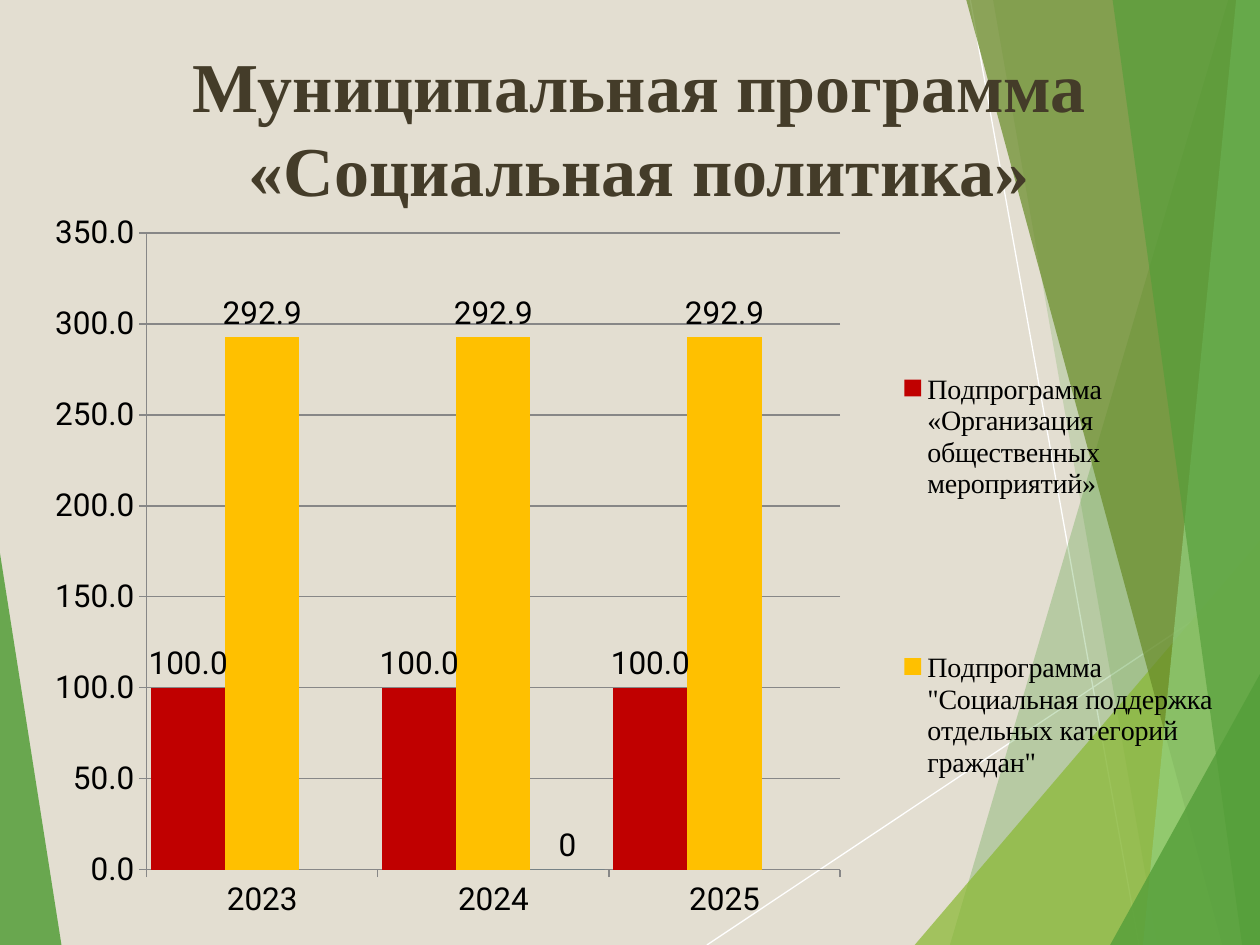
from dataclasses import dataclass

from lxml.etree import SubElement
from pptx import Presentation
from pptx.chart.data import CategoryChartData
from pptx.dml.color import RGBColor
from pptx.enum.chart import (XL_CHART_TYPE as ChartType, XL_LABEL_POSITION as LabelPos,
                             XL_LEGEND_POSITION as LegendPos, XL_TICK_MARK as Tick)
from pptx.enum.text import MSO_ANCHOR as Anchor, PP_ALIGN as Align
from pptx.oxml import parse_xml
from pptx.oxml.ns import nsdecls, qn
from pptx.util import Cm, Pt

WIDTH, HEIGHT = 25.4, 19.05


@dataclass(frozen=True)
class Theme:
    background: str = "E3DED1"
    title: str = "443C29"
    text: str = "000000"
    grid: str = "878787"
    ray: str = "FFFFFF"
    green: str = "549E39"
    lime: str = "8AB833"
    olive: str = "678A26"
    mint: str = "93D07D"
    events: str = "C00000"
    support: str = "FFC000"
    reserve: str = "076785"
    serif: str = "Times New Roman"
    sans: str = "Roboto"
    title_size: int = 40
    title_pitch: int = 48
    chart_size: int = 18
    legend_size: int = 16


def apply(target, **values):
    for name, value in values.items():
        setattr(target, name, value)


def rgb(code):
    return RGBColor.from_string(code)


def manual_layout(x, y, w, h, inner=False):
    target = '<c:layoutTarget val="inner"/>' if inner else ""
    return parse_xml(
        f'<c:layout {nsdecls("c")}><c:manualLayout>{target}'
        '<c:xMode val="edge"/><c:yMode val="edge"/>'
        f'<c:x val="{x}"/><c:y val="{y}"/><c:w val="{w}"/><c:h val="{h}"/>'
        '</c:manualLayout></c:layout>')


class SlideBuilder:
    def __init__(self, slide, theme):
        self.slide, self.theme = slide, theme
        fill = slide.background.fill
        fill.solid()
        fill.fore_color.rgb = rgb(theme.background)

    def ray(self, x1, y1, x2, y2):
        ray = self.slide.shapes.add_connector(1, Cm(x1), Cm(y1), Cm(x2), Cm(y2))
        ray.line.color.rgb = rgb(self.theme.ray)
        ray.line.width = Pt(0.75)
        SubElement(ray._element.spPr, qn("a:effectLst"))

    def facet(self, color, opacity, *corners):
        """Translucent polygon; opacity is in percent."""
        start, *rest = [(Cm(x), Cm(y)) for x, y in corners]
        outline = self.slide.shapes.build_freeform(*start)
        outline.add_line_segments(rest, close=True)
        facet = outline.convert_to_shape()
        facet.shadow.inherit = False
        facet.line.fill.background()
        facet.fill.solid()
        facet.fill.fore_color.rgb = rgb(color)
        tint = facet._element.spPr.find(qn("a:solidFill"))[0]
        SubElement(tint, qn("a:alpha"), val=str(opacity * 1000))

    def title(self, text, x, y, w, h):
        frame = self.slide.shapes.add_textbox(Cm(x), Cm(y), Cm(w), Cm(h)).text_frame
        apply(frame, text=text, word_wrap=True, vertical_anchor=Anchor.TOP)
        for line in frame.paragraphs:
            apply(line, alignment=Align.CENTER, line_spacing=Pt(self.theme.title_pitch))
            apply(line.font, name=self.theme.serif, size=Pt(self.theme.title_size), bold=True)
            line.font.color.rgb = rgb(self.theme.title)

    def columns(self, years, programmes, x, y, w, h):
        data = CategoryChartData()
        data.categories = years
        for name, values, _, number_format in programmes:
            data.add_series(name, values, number_format)
        chart = self.slide.shapes.add_chart(
            ChartType.COLUMN_CLUSTERED, Cm(x), Cm(y), Cm(w), Cm(h), data).chart
        apply(chart, has_title=False, has_legend=True)
        apply(chart.font, name=self.theme.sans, size=Pt(self.theme.chart_size))
        chart.font.color.rgb = rgb(self.theme.text)

        plot = chart.plots[0]
        apply(plot, gap_width=12, overlap=0, vary_by_categories=False)
        for series, (_, _, color, number_format) in zip(plot.series, programmes):
            series.invert_if_negative = False
            series.format.fill.solid()
            series.format.fill.fore_color.rgb = rgb(color)
            apply(series.data_labels, show_value=True, position=LabelPos.OUTSIDE_END,
                  number_format=number_format, number_format_is_linked=False)
        self.axes(chart)
        self.legend(chart, hidden=2)

        area = chart._chartSpace.chart.plotArea
        for old in area.findall(qn("c:layout")):
            area.remove(old)
        area.insert(0, manual_layout(0.108, 0.026, 0.568, 0.879, inner=True))

    def axes(self, chart):
        values = chart.value_axis
        apply(values, minimum_scale=0, maximum_scale=350, major_unit=50,
              has_major_gridlines=True)
        apply(values.tick_labels, number_format="0.0", number_format_is_linked=False)
        for axis in (values, chart.category_axis):
            apply(axis, major_tick_mark=Tick.OUTSIDE, minor_tick_mark=Tick.NONE)
        for part in (values, chart.category_axis, values.major_gridlines):
            part.format.line.color.rgb = rgb(self.theme.grid)
            part.format.line.width = Pt(0.75)

    def legend(self, chart, hidden):
        legend = chart.legend
        apply(legend, position=LegendPos.RIGHT, include_in_layout=False)
        apply(legend.font, name=self.theme.serif, size=Pt(self.theme.legend_size))
        legend.font.color.rgb = rgb(self.theme.text)
        entry = parse_xml(f'<c:legendEntry {nsdecls("c")}><c:idx val="{hidden}"/>'
                          '<c:delete val="1"/></c:legendEntry>')
        place = legend._element.find(qn("c:legendPos"))
        for old in legend._element.findall(qn("c:layout")):
            legend._element.remove(old)
        place.addnext(entry)
        entry.addnext(manual_layout(0.72, 0.01, 0.27, 0.98))


def main():
    theme = Theme()
    deck = Presentation()
    apply(deck, slide_width=Cm(WIDTH), slide_height=Cm(HEIGHT))
    page = SlideBuilder(deck.slides.add_slide(deck.slide_layouts[6]), theme)

    def band(color, opacity, top, bottom):
        """Facet from a slanted left side to the right edge of the slide."""
        page.facet(color, opacity, (top, 0), (bottom, HEIGHT), (WIDTH, HEIGHT), (WIDTH, 0))

    def corner(color, opacity, bottom, right):
        """Triangle in the lower right corner of the slide."""
        page.facet(color, opacity, (bottom, HEIGHT), (WIDTH, right), (WIDTH, HEIGHT))

    page.ray(14.25, HEIGHT, WIDTH, 11.61)
    page.ray(19.56, 0, 22.96, HEIGHT)
    page.facet(theme.green, 85, (0, 11.15), (1.24, HEIGHT), (0, HEIGHT))
    band(theme.green, 30, 24.76, 19.15)
    band(theme.green, 20, 20.02, 23.34)
    corner(theme.lime, 72, 18.44, 10.9)
    band(theme.olive, 70, 19.48, 24.64)
    band(theme.mint, 70, 24.92, 23.04)
    band(theme.green, 65, 22.43, 25.04)
    corner(theme.green, 80, 22.38, 13.59)

    page.title("Муниципальная программа\n«Социальная политика»", 1.09, 0.74, 23.6, 3.6)
    page.columns(
        ["2023", "2024", "2025"],
        [("Подпрограмма «Организация общественных мероприятий»",
          [100] * 3, theme.events, "0.0"),
         ('Подпрограмма "Социальная поддержка отдельных категорий граждан"',
          [292.9] * 3, theme.support, "0.0"),
         ("Series 3", [None, 0, None], theme.reserve, "General")],
        0.3, 4.32, 24.61, 14.6)
    deck.save("out.pptx")


if __name__ == "__main__":
    main()
